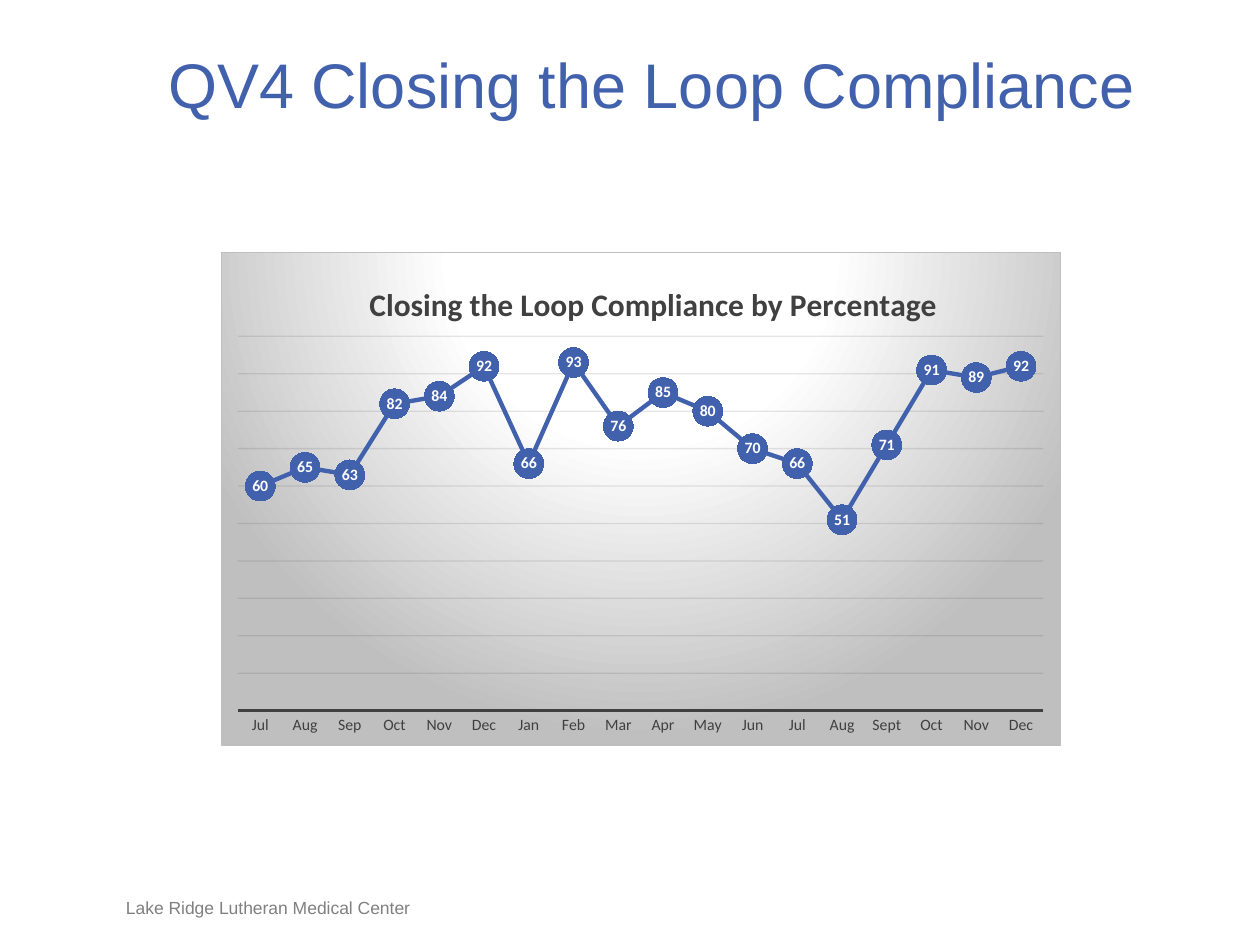
import pptx
import pptx.chart.data
import pptx.dml.color
import pptx.enum.chart
import pptx.enum.text
import pptx.oxml
import pptx.oxml.ns
import pptx.util
from pptx.util import Inches

BLUE = pptx.dml.color.RGBColor(0x42, 0x61, 0xAD)
GRAY = pptx.dml.color.RGBColor(0x80, 0x80, 0x80)
DARK = pptx.dml.color.RGBColor(0x40, 0x40, 0x40)
BLACK = pptx.dml.color.RGBColor(0x0D, 0x0D, 0x0D)
WHITE = pptx.dml.color.RGBColor(0xFF, 0xFF, 0xFF)
SILVER = pptx.dml.color.RGBColor(0xBF, 0xBF, 0xBF)

MONTHS = ["Jul", "Aug", "Sep", "Oct", "Nov", "Dec", "Jan", "Feb", "Mar",
          "Apr", "May", "Jun", "Jul", "Aug", "Sept", "Oct", "Nov", "Dec"]
COMPLIANCE = [60, 65, 63, 82, 84, 92, 66, 93, 76,
              85, 80, 70, 66, 51, 71, 91, 89, 92]


def set_format(target, values):
    for name, value in values.items():
        setattr(target, name, value)


def set_font(font, name, size, color, bold=False):
    set_format(font, {"name": name, "size": pptx.util.Pt(size), "bold": bold})
    font.color.rgb = color


def set_line(line, color, width):
    line.color.rgb = color
    line.width = pptx.util.Pt(width)


def add_text(slide, box, text, size, color, align, anchor):
    frame = slide.shapes.add_textbox(*map(Inches, box)).text_frame
    set_format(frame, {"word_wrap": True, "vertical_anchor": anchor,
                       "margin_left": 0, "margin_right": 0,
                       "margin_top": 0, "margin_bottom": 0})
    paragraph = frame.paragraphs[0]
    paragraph.alignment = align
    run = paragraph.add_run()
    run.text = text
    set_font(run.font, "Arial", size, color)


def chart_xml(xml):
    return pptx.oxml.parse_xml(
        xml.replace(">", " " + pptx.oxml.ns.nsdecls("c", "a") + ">", 1))


def place(element, after, x, y, size=None):
    """Put a manual layout, in fractions of the chart, into a title or plot."""
    parts = {"xMode": "edge", "yMode": "edge", "x": x, "y": y}
    target = ""
    if size:
        target = '<c:layoutTarget val="inner"/>'
        parts.update(w=size[0], h=size[1])
    values = "".join(f'<c:{tag} val="{value}"/>' for tag, value in parts.items())
    for old in element.findall(pptx.oxml.ns.qn("c:layout")):
        element.remove(old)
    layout = chart_xml(f"<c:layout><c:manualLayout>{target}{values}"
                       "</c:manualLayout></c:layout>")
    if after is None:
        element.insert(0, layout)
    else:
        after.addnext(layout)


def add_chart_background(chart):
    stops = "".join(f'<a:gs pos="{pos * 1000}"><a:srgbClr val="{color}"/></a:gs>'
                    for pos, color in ((0, WHITE), (39, WHITE), (100, SILVER)))
    background = chart_xml(
        f"<c:spPr><a:gradFill><a:gsLst>{stops}</a:gsLst><a:path path=\"circle\">"
        '<a:fillToRect l="50000" t="-80000" r="50000" b="180000"/></a:path>'
        f'</a:gradFill><a:ln w="9525"><a:solidFill><a:srgbClr val="{SILVER}"/>'
        "</a:solidFill></a:ln></c:spPr>")
    chart.element.find(pptx.oxml.ns.qn("c:chart")).addnext(background)


def format_axes(chart):
    months = chart.category_axis
    months.major_tick_mark = pptx.enum.chart.XL_TICK_MARK.NONE
    set_font(months.tick_labels.font, "Calibri", 9, DARK)
    set_line(months.format.line, DARK, 1.5)

    percent = chart.value_axis
    set_format(percent, {"minimum_scale": 0, "maximum_scale": 100,
                         "major_unit": 10, "has_major_gridlines": True,
                         "visible": False})
    grid = percent.major_gridlines.format.line
    set_line(grid, BLACK, 0.75)
    # Faint gridlines
    color = next(percent.major_gridlines._xAx.iter(pptx.oxml.ns.qn("a:srgbClr")))
    color.append(chart_xml('<a:alpha val="10000"></a:alpha>'))


def format_series(series):
    series.smooth = False
    set_line(series.format.line, BLUE, 2.5)
    marker = series.marker
    set_format(marker, {"style": pptx.enum.chart.XL_MARKER_STYLE.CIRCLE,
                        "size": 17})
    marker.format.fill.solid()
    marker.format.fill.fore_color.rgb = BLUE
    marker.format.line.fill.background()
    labels = series.data_labels
    set_format(labels, {"show_value": True, "number_format": "0",
                        "number_format_is_linked": False,
                        "position": pptx.enum.chart.XL_LABEL_POSITION.CENTER})
    set_font(labels.font, "Calibri", 9, WHITE, bold=True)


def add_compliance_chart(slide):
    data = pptx.chart.data.CategoryChartData(number_format="0")
    data.categories = MONTHS
    data.add_series("Series 1", COMPLIANCE)
    chart = slide.shapes.add_chart(
        pptx.enum.chart.XL_CHART_TYPE.LINE_MARKERS, Inches(1.75), Inches(2),
        Inches(6.67), Inches(3.92), data).chart
    chart.has_legend = False
    chart.plots[0].vary_by_categories = False
    set_font(chart.font, "Calibri", 10, DARK)

    # Chart title
    title = chart.chart_title
    title.text_frame.text = "Closing the Loop Compliance by Percentage"
    set_font(title.text_frame.paragraphs[0].runs[0].font, "Calibri", 18, DARK,
             bold=True)
    title_element = title._element
    place(title_element, title_element.find(pptx.oxml.ns.qn("c:tx")), 0.17, 0.05)

    plot_area = next(chart.element.iter(pptx.oxml.ns.qn("c:plotArea")))
    place(plot_area, None, 0.02, 0.17, (0.96, 0.76))
    format_axes(chart)
    format_series(chart.plots[0].series[0])
    add_chart_background(chart)


def main():
    deck = pptx.Presentation()
    deck.slide_width, deck.slide_height = Inches(10), Inches(7.5)
    slide = deck.slides.add_slide(deck.slide_layouts[6])
    align, anchor = pptx.enum.text.PP_ALIGN, pptx.enum.text.MSO_ANCHOR

    # Footer, heading and chart
    add_text(slide, (1, 7.12, 3.17, 0.17), "Lake Ridge Lutheran Medical Center",
             10, GRAY, align.LEFT, anchor.BOTTOM)
    add_text(slide, (0.92, 0.36, 8.5, 0.61), "QV4 Closing the Loop Compliance",
             36, BLUE, align.CENTER, anchor.TOP)
    add_compliance_chart(slide)
    deck.save("out.pptx")


if __name__ == "__main__":
    main()
